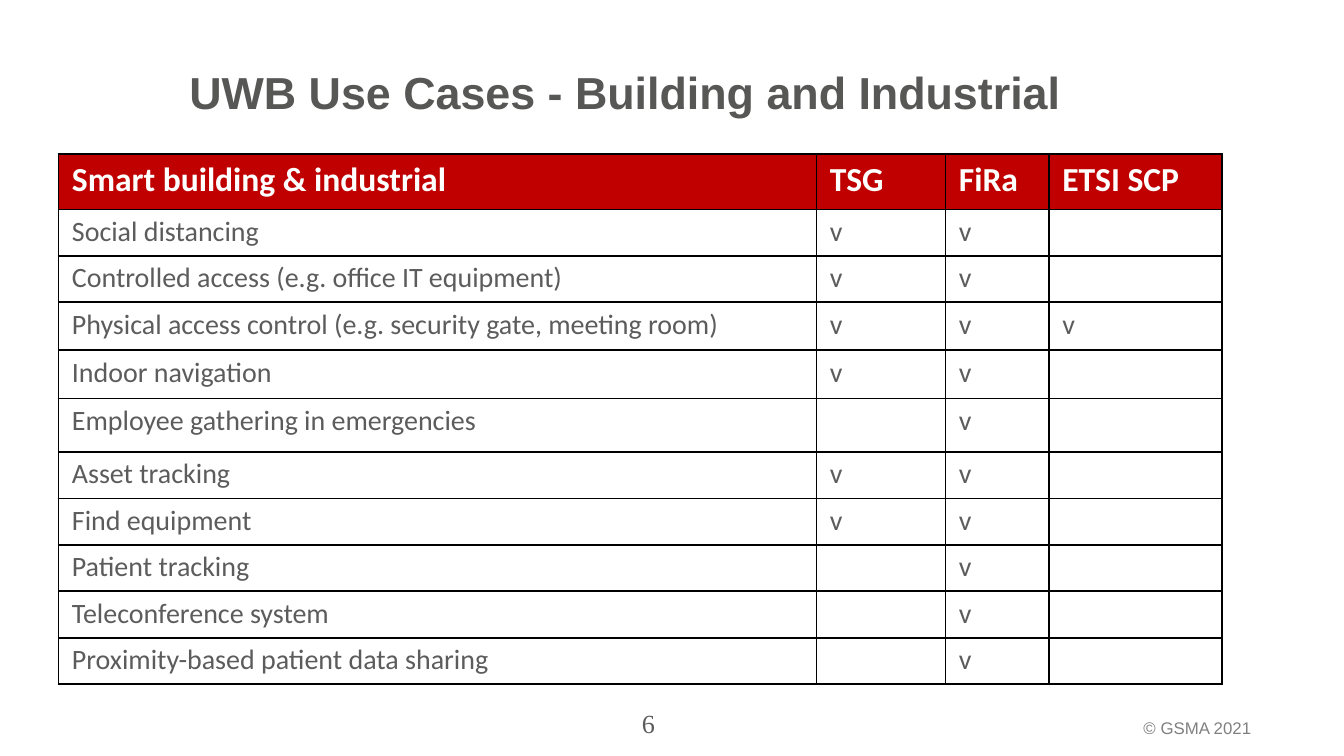
"""Build the slide on UWB use cases in building and industry."""
import pptx
import pptx.util
import pptx.dml.color
import pptx.enum.text
import pptx.oxml.ns
import lxml.etree

WIDE = 10
HIGH = WIDE * 9 / 16
RED = pptx.dml.color.RGBColor(0xC0, 0x00, 0x00)
WHITE = pptx.dml.color.RGBColor(0xFF, 0xFF, 0xFF)
SLATE = pptx.dml.color.RGBColor(0x57, 0x57, 0x56)
GRAY = pptx.dml.color.RGBColor(0x5C, 0x5C, 0x5C)
PALE = pptx.dml.color.RGBColor(0x80, 0x80, 0x80)
BLACK = pptx.dml.color.RGBColor(0x00, 0x00, 0x00)
LEFT = pptx.enum.text.PP_ALIGN.LEFT
MID = pptx.enum.text.PP_ALIGN.CENTER

HEAD = ("Smart building & industrial", "TSG", "FiRa", "ETSI SCP")
CASES = [
    ("Social distancing", "v", "v", ""),
    ("Controlled access (e.g. office IT equipment)", "v", "v", ""),
    ("Physical access control (e.g. security gate, meeting room)", "v", "v", "v"),
    ("Indoor navigation", "v", "v", ""),
    ("Employee gathering in emergencies", "", "v", ""),
    ("Asset tracking", "v", "v", ""),
    ("Find equipment", "v", "v", ""),
    ("Patient tracking", "", "v", ""),
    ("Teleconference system", "", "v", ""),
    ("Proximity-based patient data sharing", "", "v", ""),
]
COLS = (56.4, 9.6, 7.7, 12.9)
ROWS = (7.3, 6.15, 6.15, 6.35, 6.4, 7.05, 6.15, 6.15, 6.15, 6.15, 6.1)
SPOT = (4.35, 20.4)
LABELS = [
    ("UWB Use Cases - Building and Industrial", (13.1, 7.65, 80.9, 16.7),
     LEFT, ("Arial", 24, SLATE, True)),
    ("6", (36.6, 92.65, 23.3, 5.35), MID, ("Times New Roman", 14, GRAY, False)),
    ("© GSMA 2021", (84.1, 94.1, 15.7, 4.45), LEFT, ("Arial", 9, PALE, False)),
]


def across(share):
    return pptx.util.Inches(WIDE * share / 100)


def down(share):
    return pptx.util.Inches(HIGH * share / 100)


def write(para, text, style):
    face, size, color, bold = style
    run = para.add_run()
    run.text = text
    run.font.name = face
    run.font.size = pptx.util.Pt(size)
    run.font.color.rgb = color
    run.font.bold = bold


def frame(cell):
    props = cell._tc.get_or_add_tcPr()
    name = pptx.oxml.ns.qn
    for side in ("a:lnL", "a:lnR", "a:lnT", "a:lnB"):
        line = lxml.etree.SubElement(props, name(side), w=str(pptx.util.Pt(1)))
        fill = lxml.etree.SubElement(line, name("a:solidFill"))
        lxml.etree.SubElement(fill, name("a:srgbClr"), val=str(BLACK))


def label(slide, text, area, align, style):
    x, y, w, h = area
    box = slide.shapes.add_textbox(across(x), down(y), across(w), down(h))
    box.text_frame.word_wrap = True
    para = box.text_frame.paragraphs[0]
    para.alignment = align
    write(para, text, style)


def fill_in(cell, text, top):
    cell.margin_left = cell.margin_right = pptx.util.Inches(0.1)
    cell.margin_top = cell.margin_bottom = pptx.util.Inches(0.04)
    frame(cell)
    if top:
        cell.fill.solid()
        cell.fill.fore_color.rgb = RED
    else:
        cell.fill.background()
    size = 18 if top else 15
    para = cell.text_frame.paragraphs[0]
    if text:
        write(para, text, ("Calibri", size, WHITE if top else GRAY, top))
    else:
        tag = pptx.oxml.ns.qn("a:endParaRPr")
        lxml.etree.SubElement(para._p, tag, sz=str(size * 100))


def chart_cases(slide):
    shape = slide.shapes.add_table(
        len(ROWS), len(COLS), across(SPOT[0]), down(SPOT[1]),
        across(sum(COLS)), down(sum(ROWS)))
    table = shape.table
    table.horz_banding = False
    for col, share in zip(table.columns, COLS):
        col.width = across(share)
    for row, share in zip(table.rows, ROWS):
        row.height = down(share)
    for r, texts in enumerate([HEAD] + CASES):
        for c, text in enumerate(texts):
            fill_in(table.cell(r, c), text, r == 0)


def main():
    deck = pptx.Presentation()
    deck.slide_width, deck.slide_height = across(100), down(100)
    slide = deck.slides.add_slide(deck.slide_layouts[6])
    chart_cases(slide)
    for item in LABELS:
        label(slide, *item)
    deck.save("out.pptx")


if __name__ == "__main__":
    main()
